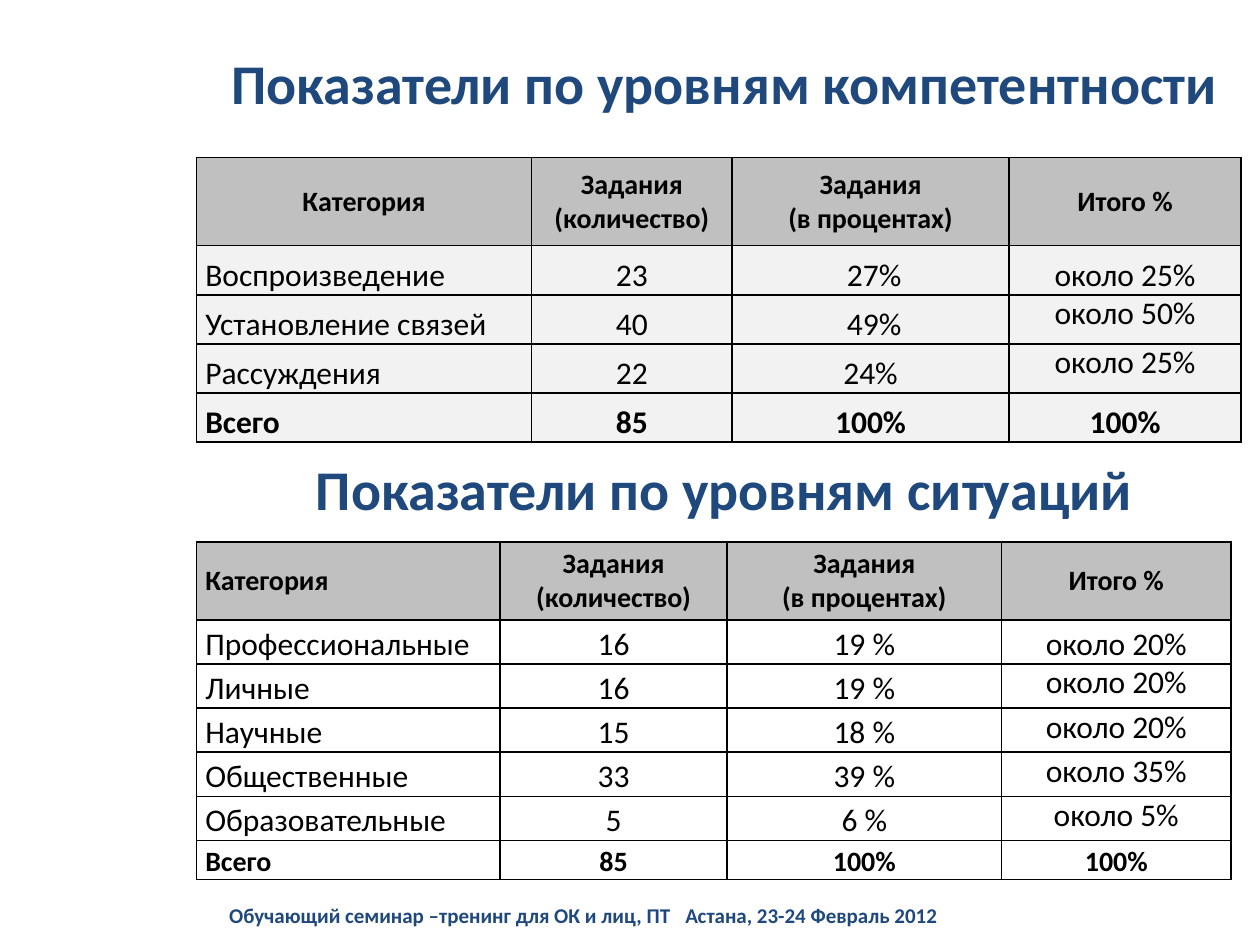
"""Build a slide with two tables of task indicators by competence and situation level."""
import pptx
import pptx.dml.color
import pptx.enum.text
import pptx.oxml
import pptx.oxml.ns
import pptx.util

ANCHOR = pptx.enum.text.MSO_ANCHOR
ALIGN = pptx.enum.text.PP_ALIGN
FONT = "Calibri"
COLORS = {"heading": "1F497D", "text": "000000", "header": "C0C0C0",
          "gray": "F2F2F2", "white": "FFFFFF"}
SLIDE_SIZE = (10, 7.5)
TEXT_LEFT = 1.72
TABLE_LEFT = 1.56

HEADER = ["Категория", "Задания\n(количество)", "Задания\n(в процентах)", "Итого %"]
HEADINGS = [
    {"text": "Показатели по уровням компетентности", "top": 0.16, "height": 0.99},
    {"text": "Показатели по уровням ситуаций", "top": 3.52, "height": 0.7},
]
FOOTER = {"text": "Обучающий семинар –тренинг для ОК и лиц, ПТ\tАстана, 23-24 Февраль 2012",
          "top": 7.1, "height": 0.32, "width": 6.95, "tab": 3.62}
TABLES = [
    {
        "top": 1.25, "columns": [2.66, 1.59, 2.2, 1.84], "fill": "gray",
        "header_height": 0.7, "row_height": 0.39, "total_height": 0.39,
        "total_size": 18, "first_align": ALIGN.CENTER,
        "rows": [
            ["Воспроизведение", "23", " 27%", "около 25%"],
            ["Установление связей", "40", " 49%", "около 50%"],
            ["Рассуждения", "22", "24%", "около 25%"],
            ["Всего", "85", "100%", "100%"],
        ],
    },
    {
        "top": 4.3, "columns": [2.41, 1.8, 2.18, 1.82], "fill": "white",
        "header_height": 0.62, "row_height": 0.35, "total_height": 0.31,
        "total_size": 16, "first_align": ALIGN.LEFT,
        "rows": [
            ["Профессиональные", "16", "19 %", "около 20%"],
            ["Личные", "16", "19 %", "около 20%"],
            ["Научные", "15", "18 %", "около 20%"],
            ["Общественные", "33", "39 %", "около 35%"],
            ["Образовательные", "5", "6 %", "около 5%"],
            ["Всего", "85", "100%", "100%"],
        ],
    },
]


def color(name):
    return pptx.dml.color.RGBColor.from_string(COLORS[name])


def style_text(frame, size, bold, color_name, align):
    for paragraph in frame.paragraphs:
        paragraph.alignment = align
        paragraph.font.name = FONT
        paragraph.font.size = pptx.util.Pt(size)
        paragraph.font.bold = bold
        paragraph.font.color.rgb = color(color_name)


def add_text(slide, text, top, height, size, align, width=8.06, tab=None):
    box = slide.shapes.add_textbox(
        *map(pptx.util.Inches, (TEXT_LEFT, top, width, height)))
    frame = box.text_frame
    frame.word_wrap = True
    frame.vertical_anchor = ANCHOR.MIDDLE
    frame.text = text
    if tab:
        properties = frame.paragraphs[0]._p.get_or_add_pPr()
        properties.append(pptx.oxml.parse_xml(
            f'<a:tabLst {pptx.oxml.ns.nsdecls("a")}>'
            f'<a:tab pos="{pptx.util.Inches(tab)}" algn="l"/></a:tabLst>'))
    style_text(frame, size, True, "heading", align)


def add_borders(cell):
    properties = cell._tc.get_or_add_tcPr()
    for side in "LRTB":
        properties.append(pptx.oxml.parse_xml(
            f'<a:ln{side} {pptx.oxml.ns.nsdecls("a")} w="{pptx.util.Pt(1)}">'
            f'<a:solidFill><a:srgbClr val="{COLORS["text"]}"/></a:solidFill></a:ln{side}>'))


def format_cell(cell, text, size, bold, align, anchor, fill):
    cell.text = text
    cell.margin_left = cell.margin_right = pptx.util.Inches(0.07)
    cell.margin_top = cell.margin_bottom = 0
    cell.vertical_anchor = anchor
    add_borders(cell)
    cell.fill.solid()
    cell.fill.fore_color.rgb = color(fill)
    style_text(cell.text_frame, size, bold, "text", align)


def add_indicator_table(slide, data):
    rows = [HEADER] + data["rows"]
    last = len(rows) - 1
    heights = [data["header_height"], *[data["row_height"]] * (last - 1), data["total_height"]]
    table = slide.shapes.add_table(
        len(rows), len(HEADER), *map(pptx.util.Inches, (
            TABLE_LEFT, data["top"], sum(data["columns"]), sum(heights)))).table
    for column, width in zip(table.columns, data["columns"]):
        column.width = pptx.util.Inches(width)
    for r, (values, height) in enumerate(zip(rows, heights)):
        table.rows[r].height = pptx.util.Inches(height)
        header, total = r == 0, r == last
        size = 16 if header else data["total_size"] if total else 18
        fill = "header" if header else data["fill"]
        for c, text in enumerate(values):
            first_align = data["first_align"] if header else ALIGN.LEFT
            raised = c == len(HEADER) - 1 and 1 < r < last
            anchor = ANCHOR.MIDDLE if header else ANCHOR.TOP if raised else ANCHOR.BOTTOM
            format_cell(table.cell(r, c), text, size, header or total,
                        ALIGN.CENTER if c else first_align, anchor, fill)


def main():
    presentation = pptx.Presentation()
    presentation.slide_width, presentation.slide_height = map(pptx.util.Inches, SLIDE_SIZE)
    slide = presentation.slides.add_slide(presentation.slide_layouts[6])
    for heading, data in zip(HEADINGS, TABLES):
        add_text(slide, **heading, size=32, align=ALIGN.CENTER)
        add_indicator_table(slide, data)
    add_text(slide, **FOOTER, size=12, align=ALIGN.LEFT)
    presentation.save("out.pptx")


if __name__ == "__main__":
    main()
